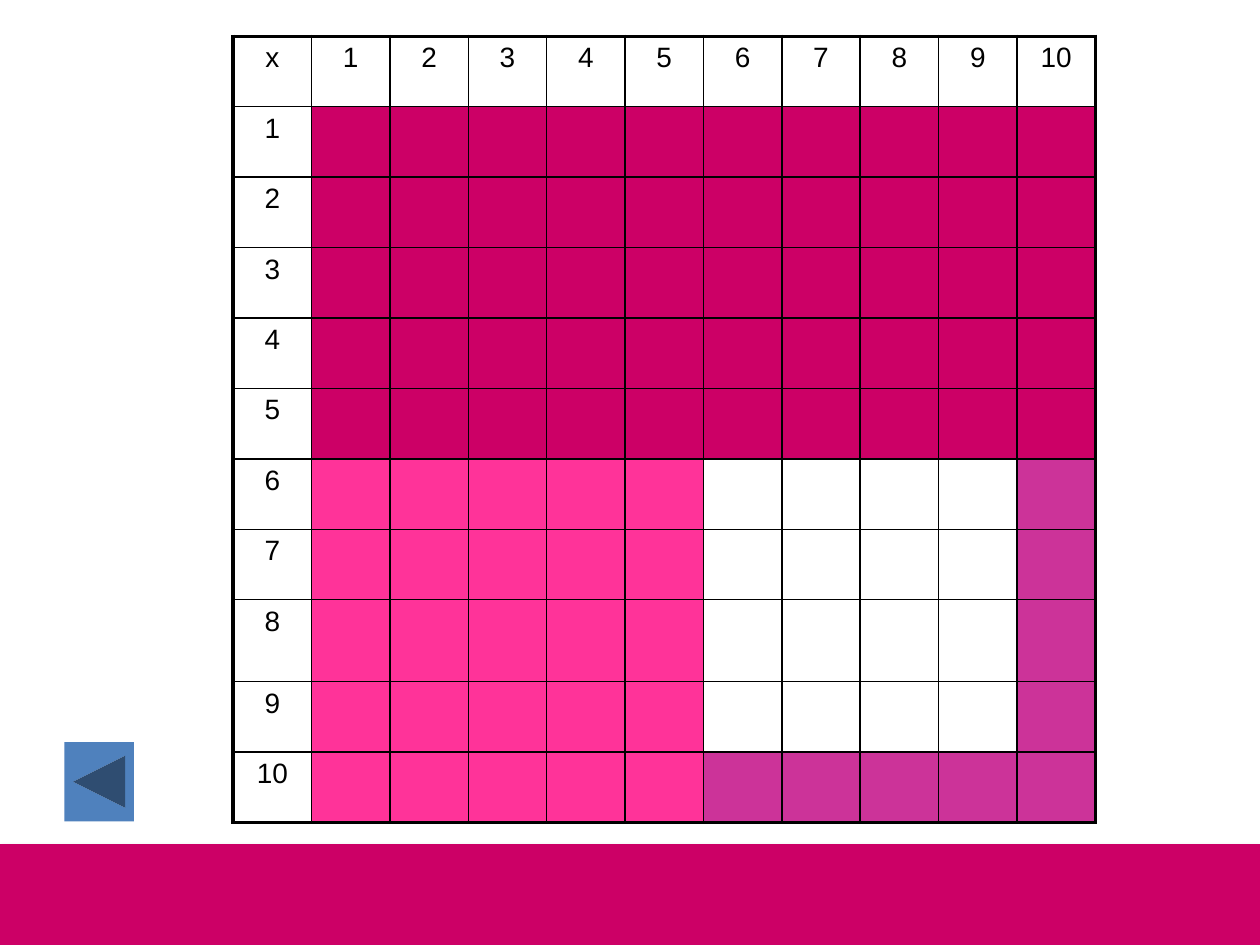
from dataclasses import dataclass

from lxml.etree import SubElement
from pptx import Presentation
from pptx.dml.color import RGBColor
from pptx.enum.shapes import MSO_SHAPE
from pptx.enum.text import PP_ALIGN
from pptx.oxml.ns import qn
from pptx.util import Cm, Pt


@dataclass(frozen=True)
class Theme:
    font: str = "Arial"
    text_size: float = 16
    ink: str = "000000"
    crimson: str = "CC0066"
    pink: str = "FF3399"
    purple: str = "CC3399"
    blue: str = "4F81BD"
    inner_line: float = 1
    outer_line: float = 2.25


THEME = Theme()
LAST = 10
COLUMN_WIDTH = Cm(1.58)
ROW_HEIGHT = Cm(1.42)
TALL_ROW, TALL_HEIGHT = 8, Cm(1.65)


def add_block(page, preset, left, top, width, height, color):
    block = page.shapes.add_shape(preset, left, top, width, height)
    block.shadow.inherit = False
    block.fill.solid()
    block.fill.fore_color.rgb = RGBColor.from_string(color)
    block.line.fill.background()
    return block


def add_soft_shadow(shape):
    effects = shape._element.spPr.find(qn("a:effectLst"))
    shadow = SubElement(effects, qn("a:outerShdw"), blurRad=str(Pt(3.1)),
                        dist=str(Pt(1.8)), dir="5400000", rotWithShape="0")
    color = SubElement(shadow, qn("a:srgbClr"), val=THEME.ink)
    SubElement(color, qn("a:alpha"), val="35000")


def region_color(row, column):
    """Colour of the block of products a cell belongs to, or None if unfilled."""
    if row == 0 or column == 0:
        return None
    if row <= 5:
        return THEME.crimson
    if column <= 5:
        return THEME.pink
    if LAST in (row, column):
        return THEME.purple
    return None


def set_borders(cell, row, column):
    """Thin lines inside the grid, thick lines on its outer edge."""
    outer_edges = {"lnL": column == 0, "lnR": column == LAST,
                   "lnT": row == 0, "lnB": row == LAST}
    properties = cell._tc.get_or_add_tcPr()
    for edge, is_outer in outer_edges.items():
        width = THEME.outer_line if is_outer else THEME.inner_line
        line = SubElement(properties, qn(f"a:{edge}"), w=str(Pt(width)))
        fill = SubElement(line, qn("a:solidFill"))
        SubElement(fill, qn("a:srgbClr"), val=THEME.ink)


def set_fill(cell, color):
    if color is None:
        cell.fill.background()
    else:
        cell.fill.solid()
        cell.fill.fore_color.rgb = RGBColor.from_string(color)


def write_heading(cell, number):
    para = cell.text_frame.paragraphs[0]
    para.text = str(number) if number else "x"
    para.alignment = PP_ALIGN.CENTER
    para.font.name = THEME.font
    para.font.size = Pt(THEME.text_size)
    para.font.color.rgb = RGBColor.from_string(THEME.ink)


def add_times_table(page, left, top):
    count = LAST + 1
    frame = page.shapes.add_table(count, count, left, top, COLUMN_WIDTH * count,
                                  ROW_HEIGHT * LAST + TALL_HEIGHT)
    table = frame.table
    table.first_row = table.horz_banding = False
    for index in range(count):
        table.columns[index].width = COLUMN_WIDTH
        table.rows[index].height = TALL_HEIGHT if index == TALL_ROW else ROW_HEIGHT
    for row in range(count):
        for column in range(count):
            cell = table.cell(row, column)
            set_borders(cell, row, column)
            set_fill(cell, region_color(row, column))
            if row == 0 or column == 0:
                write_heading(cell, row + column)


def main():
    deck = Presentation()
    deck.slide_width, deck.slide_height = Cm(25.4), Cm(19.05)
    page = deck.slides.add_slide(deck.slide_layouts[6])

    footer = add_block(page, MSO_SHAPE.RECTANGLE, Cm(0), Cm(17.02),
                       Cm(25.4), Cm(2.03), THEME.crimson)
    add_soft_shadow(footer)
    add_times_table(page, Cm(4.7), Cm(0.73))
    add_block(page, MSO_SHAPE.ACTION_BUTTON_BACK_OR_PREVIOUS, Cm(1.3), Cm(14.96),
              Cm(1.4), Cm(1.6), THEME.blue)

    deck.save("out.pptx")


if __name__ == "__main__":
    main()
